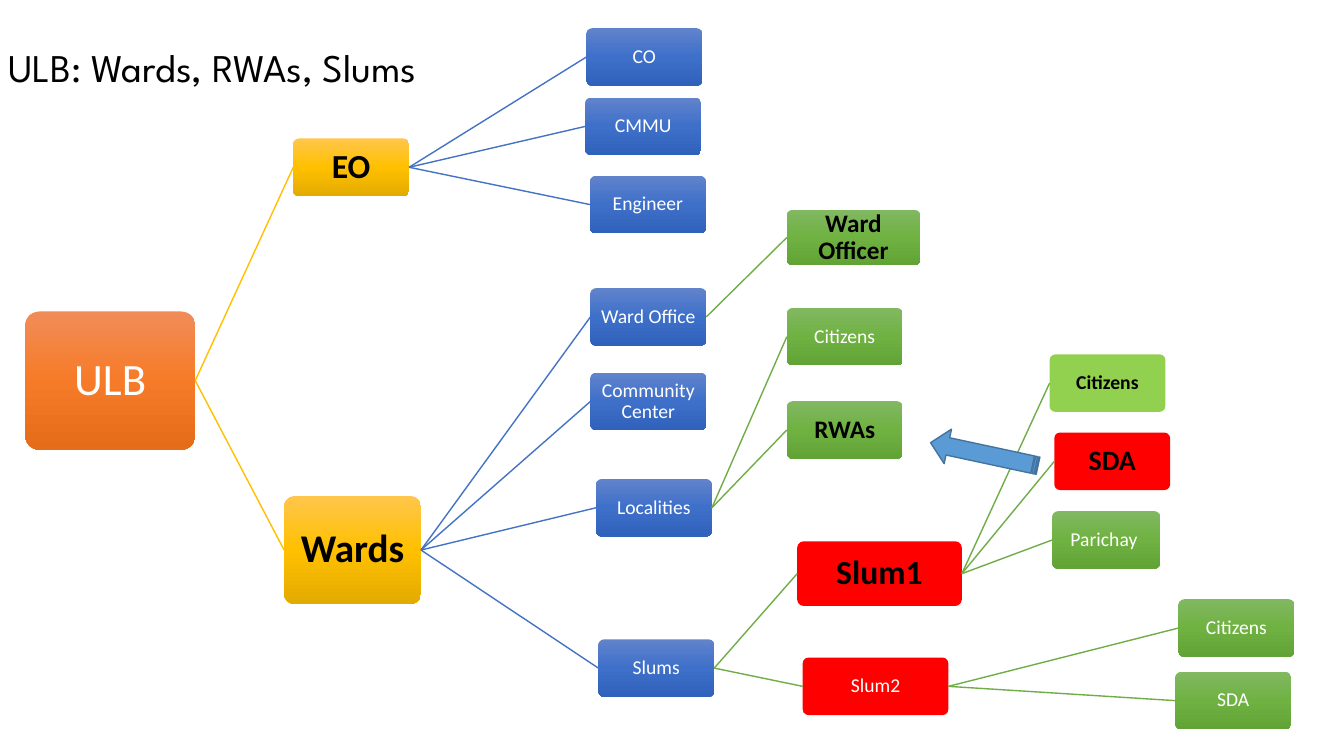
from dataclasses import dataclass

from lxml.etree import SubElement
from pptx import Presentation
from pptx.dml.color import RGBColor
from pptx.enum.shapes import MSO_CONNECTOR, MSO_SHAPE
from pptx.enum.text import MSO_ANCHOR, PP_ALIGN
from pptx.oxml import parse_xml
from pptx.oxml.ns import nsdecls, qn
from pptx.util import Cm, Pt

TITLE = "ULB: Wards, RWAs, Slums"
BOX = (2.92, 1.45)

# key: (label, parent, left, top, (width, height), fill, text style)
NODES = {
    "ulb": ("ULB", None, 0.64, 7.85, (4.28, 3.48), "orange", "root"),
    "eo": ("EO", "ulb", 7.39, 3.49, BOX, "gold", "head"),
    "co": ("CO", "eo", 14.78, 0.71, BOX, "blue", "plain"),
    "cmmu": ("CMMU", "eo", 14.75, 2.46, BOX, "blue", "plain"),
    "engineer": ("Engineer", "eo", 14.87, 4.43, BOX, "blue", "plain"),
    "wards": ("Wards", "ulb", 7.16, 12.5, (3.45, 2.72), "gold", "branch"),
    "office": ("Ward Office", "wards", 14.88, 7.26, BOX, "blue", "plain"),
    "officer": ("Ward Officer", "office", 19.83, 5.29, (3.36, 1.39), "green", "strong"),
    "center": ("Community Center", "wards", 14.88, 9.39, BOX, "blue", "plain"),
    "localities": ("Localities", "wards", 15.02, 12.07, BOX, "blue", "plain"),
    "residents": ("Citizens", "localities", 19.83, 7.76, BOX, "green", "plain"),
    "rwas": ("RWAs", "localities", 19.83, 10.11, BOX, "green", "strong"),
    "slums": ("Slums", "wards", 15.08, 16.11, BOX, "blue", "plain"),
    "slum1": ("Slum1", "slums", 20.09, 13.64, (4.15, 1.63), "red", "head"),
    "citizens1": ("Citizens", "slum1", 26.45, 8.93, BOX, "lime", "small"),
    "sda1": ("SDA", "slum1", 26.57, 10.9, BOX, "red", "mid"),
    "parichay": ("Parichay ", "slum1", 26.52, 12.88, (2.72, 1.45), "green", "plain"),
    "slum2": ("Slum2", "slums", 20.23, 16.57, (3.67, 1.45), "red", "plain"),
    "citizens2": ("Citizens", "slum2", 29.7, 15.1, BOX, "green", "plain"),
    "sda2": ("SDA", "slum2", 29.62, 16.93, BOX, "green", "plain"),
}


@dataclass(frozen=True)
class Theme:
    title_font = "League Spartan"
    body_font = "Calibri"
    title_size = 28
    black = "000000"
    arrow_fill = "5B9BD5"
    arrow_line = "43739E"
    fills = {
        "orange": ("F18C57", "F67B28", "E56C19"),
        "gold": ("FFC64B", "FFC000", "E3AB00"),
        "blue": ("6183CB", "3E70CA", "3062BB"),
        "green": ("81B861", "6FB242", "62A336"),
        "red": ("FF0000",),
        "lime": ("92D050",),
    }
    level_lines = ("FFC000", "4472C4", "70AD47", "70AD47")
    styles = {
        "root": (32, "FFFFFF", False),
        "branch": (28, "000000", True),
        "head": (24, "000000", True),
        "mid": (20, "000000", True),
        "strong": (18, "000000", True),
        "small": (14, "000000", True),
        "plain": (14, "FFFFFF", False),
    }


theme = Theme()


def rgb(value):
    return RGBColor.from_string(value)


def paint(sp, colors):
    sp.fill.solid()
    sp.fill.fore_color.rgb = rgb(colors[0])
    if len(colors) > 1:
        stops = "".join(
            f'<a:gs pos="{i * 50000}"><a:srgbClr val="{c}"/></a:gs>'
            for i, c in enumerate(colors)
        )
        solid = sp._element.spPr.find(qn("a:solidFill"))
        solid.getparent().replace(solid, parse_xml(
            f'<a:gradFill {nsdecls("a")} rotWithShape="1"><a:gsLst>{stops}</a:gsLst>'
            '<a:lin ang="5400000" scaled="0"/></a:gradFill>'
        ))


def write(sp, text, font, size, color, bold=False, align=PP_ALIGN.LEFT):
    tf = sp.text_frame
    tf.word_wrap = True
    tf.vertical_anchor = MSO_ANCHOR.MIDDLE
    p = tf.paragraphs[0]
    p.alignment = align
    p.line_spacing = 0.9
    r = p.add_run()
    r.text = text
    r.font.name = font
    r.font.size = Pt(size)
    r.font.bold = bold
    r.font.color.rgb = rgb(color)


def add_node(slide, label, left, top, size, fill, style):
    sp = slide.shapes.add_shape(
        MSO_SHAPE.ROUNDED_RECTANGLE, Cm(left), Cm(top), Cm(size[0]), Cm(size[1])
    )
    sp.adjustments[0] = 0.1
    sp.shadow.inherit = False
    sp.line.fill.background()
    paint(sp, theme.fills[fill])
    tf = sp.text_frame
    tf.margin_left = tf.margin_right = tf.margin_top = tf.margin_bottom = Cm(0.03)
    write(sp, label, theme.body_font, *theme.styles[style], PP_ALIGN.CENTER)
    return sp


def add_link(slide, parent, child, color):
    cn = slide.shapes.add_connector(MSO_CONNECTOR.STRAIGHT, 0, 0, 0, 0)
    cn.begin_connect(parent, 3)
    cn.end_connect(child, 1)
    cn.line.color.rgb = rgb(color)
    cn.line.width = Pt(1)
    SubElement(cn._element.spPr, qn("a:effectLst"))


def main():
    prs = Presentation()
    prs.slide_width, prs.slide_height = Cm(33.87), Cm(19.05)
    slide = prs.slides.add_slide(prs.slide_layouts[6])

    title = slide.shapes.add_textbox(Cm(-0.03), Cm(-0.08), Cm(29.21), Cm(3.68))
    write(title, TITLE, theme.title_font, theme.title_size, theme.black)

    boxes, levels = {}, {}
    for key, (label, parent, *layout) in NODES.items():
        boxes[key] = add_node(slide, label, *layout)
        levels[key] = levels[parent] + 1 if parent else 0
        if parent:
            color = theme.level_lines[levels[parent]]
            add_link(slide, boxes[parent], boxes[key], color)

    arrow = slide.shapes.add_shape(
        MSO_SHAPE.STRIPED_RIGHT_ARROW, Cm(23.42), Cm(11), Cm(2.77), Cm(0.89)
    )
    arrow.rotation = 192.1
    arrow.shadow.inherit = False
    paint(arrow, (theme.arrow_fill,))
    arrow.line.color.rgb = rgb(theme.arrow_line)
    arrow.line.width = Pt(1)

    prs.save("out.pptx")


if __name__ == "__main__":
    main()
